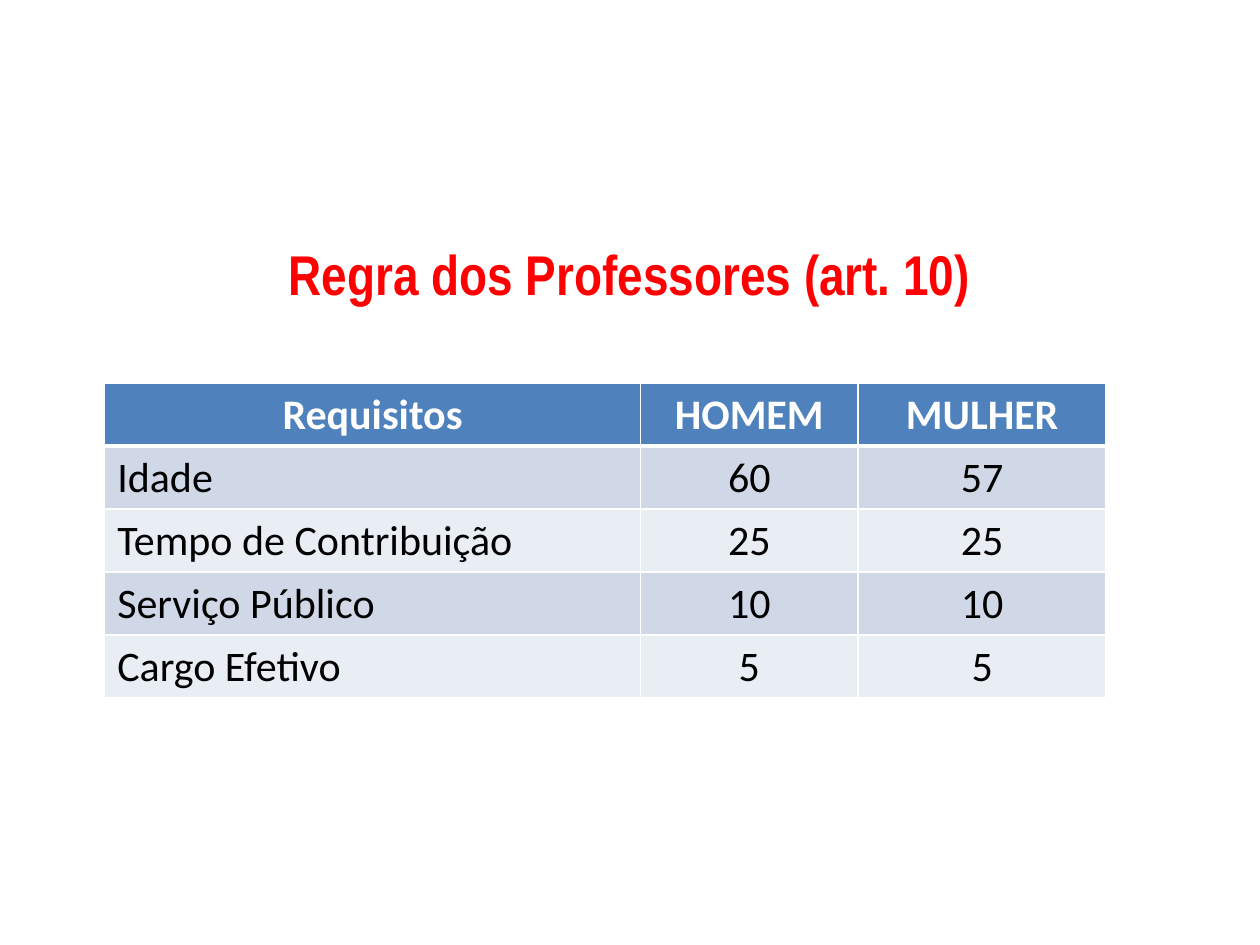
import pptx
import pptx.dml.color
import pptx.enum.text
import pptx.oxml
import pptx.oxml.ns
import pptx.util
from pptx.util import Cm

ALIGN = pptx.enum.text.PP_ALIGN
WHITE = "FFFFFF"
TITLE_FORMAT = {"name": "Arial Narrow", "size": pptx.util.Pt(32), "bold": True}
HEADER_FORMAT = {"name": "Calibri", "size": pptx.util.Pt(24), "bold": True}
BODY_FORMAT = {**HEADER_FORMAT, "bold": False}
COLUMN_WIDTHS = [10.8, 4.39, 5]
ROW_HEIGHT = 1.27
REQUIREMENTS = [
    ("Requisitos", "HOMEM", "MULHER"),
    ("Idade", "60", "57"),
    ("Tempo de Contribuição", "25", "25"),
    ("Serviço Público", "10", "10"),
    ("Cargo Efetivo", "5", "5"),
]


def color(value):
    return pptx.dml.color.RGBColor.from_string(value)


def write_text(frame, text, font_format, font_color, alignment):
    para = frame.paragraphs[0]
    para.alignment = alignment
    span = para.add_run()
    span.text = text
    for name, value in font_format.items():
        setattr(span.font, name, value)
    span.font.color.rgb = color(font_color)


def add_title(page, text):
    box = page.shapes.add_textbox(Cm(1.5), Cm(4.7), Cm(22.4), Cm(3))
    box.text_frame.word_wrap = True
    write_text(box.text_frame, text, TITLE_FORMAT, "FF0000", ALIGN.CENTER)


def set_borders(cell, widths):
    properties = cell._tc.get_or_add_tcPr()
    for side, points in widths.items():
        properties.append(pptx.oxml.parse_xml(
            f'<a:ln{side} {pptx.oxml.ns.nsdecls("a")} w="{pptx.util.Pt(points)}">'
            f'<a:solidFill><a:srgbClr val="{WHITE}"/></a:solidFill></a:ln{side}>'
        ))


def fill_cell(cell, text, row_index, column_index):
    header = row_index == 0
    set_borders(cell, {"L": 1, "R": 1, "T": 3 if row_index == 1 else 1, "B": 3 if header else 1})
    cell.fill.solid()
    band = "D0D8E8" if row_index % 2 else "E9EDF4"
    cell.fill.fore_color.rgb = color("4F81BD" if header else band)
    write_text(
        cell.text_frame,
        text,
        HEADER_FORMAT if header else BODY_FORMAT,
        WHITE if header else "000000",
        ALIGN.CENTER if header or column_index else ALIGN.LEFT,
    )


def add_requirements(page, rows):
    table = page.shapes.add_table(
        len(rows), len(COLUMN_WIDTHS), Cm(2.11), Cm(7.72),
        Cm(sum(COLUMN_WIDTHS)), Cm(ROW_HEIGHT * len(rows)),
    ).table
    for column, width in zip(table.columns, COLUMN_WIDTHS):
        column.width = Cm(width)
    for row_index, texts in enumerate(rows):
        for column_index, text in enumerate(texts):
            fill_cell(table.cell(row_index, column_index), text, row_index, column_index)


def main():
    deck = pptx.Presentation()
    deck.slide_width = Cm(25.4)
    deck.slide_height = Cm(19.05)
    page = deck.slides.add_slide(deck.slide_layouts[6])
    add_title(page, "Regra dos Professores (art. 10)")
    add_requirements(page, REQUIREMENTS)
    deck.save("out.pptx")


if __name__ == "__main__":
    main()
